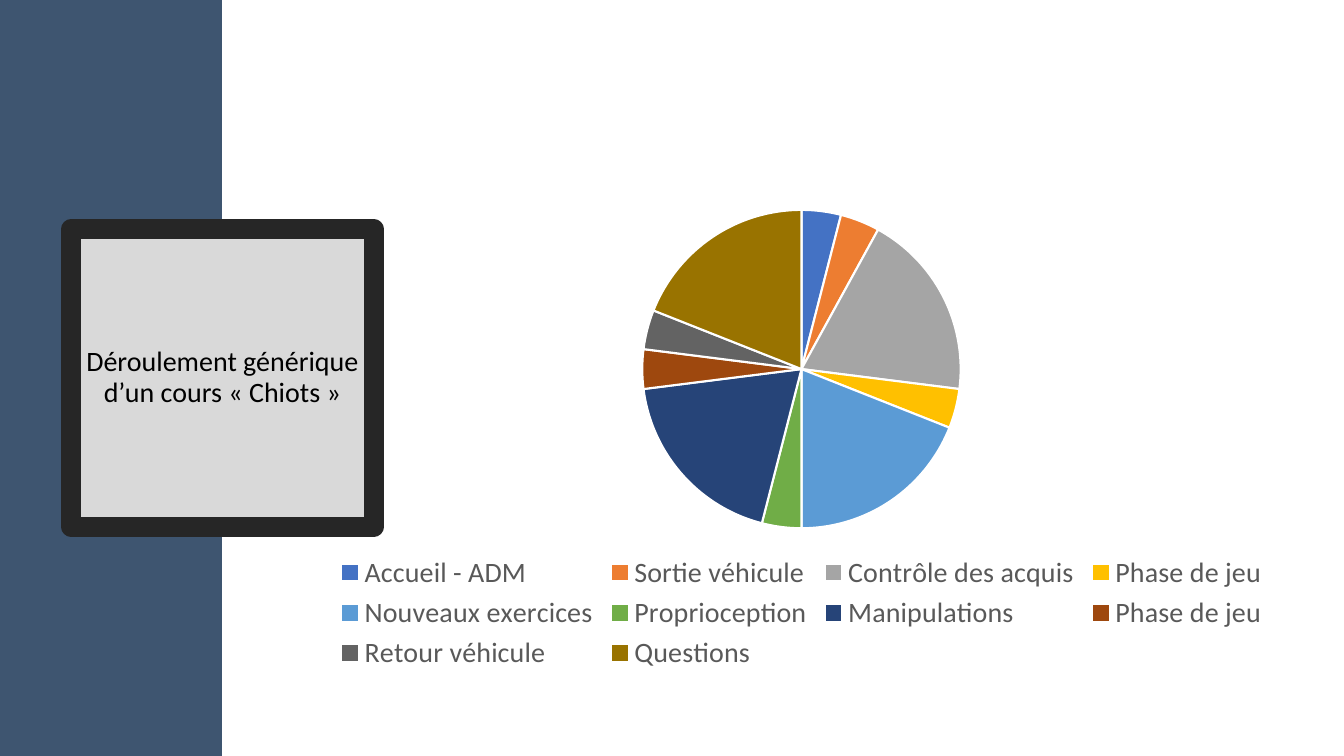
from lxml import etree
from pptx import Presentation, util as u
from pptx.chart.data import CategoryChartData
from pptx.dml.color import RGBColor
from pptx.enum import chart as ch, shapes, text
from pptx.oxml.ns import qn

PX = 914400 / 100.8
THEME = {
    "font": "Calibri",
    "size": u.Pt(20),
    "band": "3E5570",
    "panel": "D9D9D9",
    "frame": "262626",
    "title": "000000",
    "legend": "595959",
    "separator": "FFFFFF",
}
STEPS = [
    ("Accueil - ADM", 4, "4472C4"),
    ("Sortie véhicule", 4, "ED7D31"),
    ("Contrôle des acquis", 19, "A5A5A5"),
    ("Phase de jeu", 4, "FFC000"),
    ("Nouveaux exercices", 19, "5B9BD5"),
    ("Proprioception", 4, "70AD47"),
    ("Manipulations", 19, "264478"),
    ("Phase de jeu", 4, "9E480E"),
    ("Retour véhicule", 4, "636363"),
    ("Questions", 19, "997300"),
]


def box(*lengths):
    return [u.Emu(round(n * PX)) for n in lengths]


def rectangle(slide, place, fill):
    sp = slide.shapes.add_shape(shapes.MSO_SHAPE.RECTANGLE, *box(*place))
    sp.shadow.inherit = False
    sp.fill.solid()
    sp.fill.fore_color.rgb = RGBColor.from_string(fill)
    sp.line.fill.background()
    return sp


prs = Presentation()
prs.slide_width, prs.slide_height = box(1344, 756)
s = prs.slides.add_slide(prs.slide_layouts[6])

rectangle(s, (0, 0, 222, 756), THEME["band"])

title = rectangle(s, (71, 229, 303, 298), THEME["panel"])
title.line.color.rgb = RGBColor.from_string(THEME["frame"])
title.line.width = u.Pt(13.75)
etree.SubElement(title.line._get_or_add_ln(), qn("a:round"))
tf = title.text_frame
tf.word_wrap = True
tf.vertical_anchor = text.MSO_ANCHOR.MIDDLE
p = tf.paragraphs[0]
p.text = "Déroulement générique d’un cours « Chiots »"
p.alignment = text.PP_ALIGN.CENTER
p.line_spacing = 0.9
p.font.name = THEME["font"]
p.font.size = THEME["size"]
p.font.color.rgb = RGBColor.from_string(THEME["title"])

data = CategoryChartData()
data.categories = [name for name, _, _ in STEPS]
data.add_series("Series 1", [share for _, share, _ in STEPS])
chart = s.shapes.add_chart(
    ch.XL_CHART_TYPE.PIE, *box(222, 196, 1159, 480), data
).chart
chart.has_title = False
chart.font.name = THEME["font"]
chart.font.size = u.Pt(10)
chart.has_legend = True
legend = chart.legend
legend.position = ch.XL_LEGEND_POSITION.BOTTOM
legend.include_in_layout = False
legend.font.name = THEME["font"]
legend.font.size = THEME["size"]
legend.font.color.rgb = RGBColor.from_string(THEME["legend"])

plot = chart.plots[0]
plot.vary_by_categories = True
for i, (_, _, color) in enumerate(STEPS):
    fmt = plot.series[0].points[i].format
    fmt.fill.solid()
    fmt.fill.fore_color.rgb = RGBColor.from_string(color)
    fmt.line.color.rgb = RGBColor.from_string(THEME["separator"])
    fmt.line.width = u.Pt(1.5)

prs.save("out.pptx")
